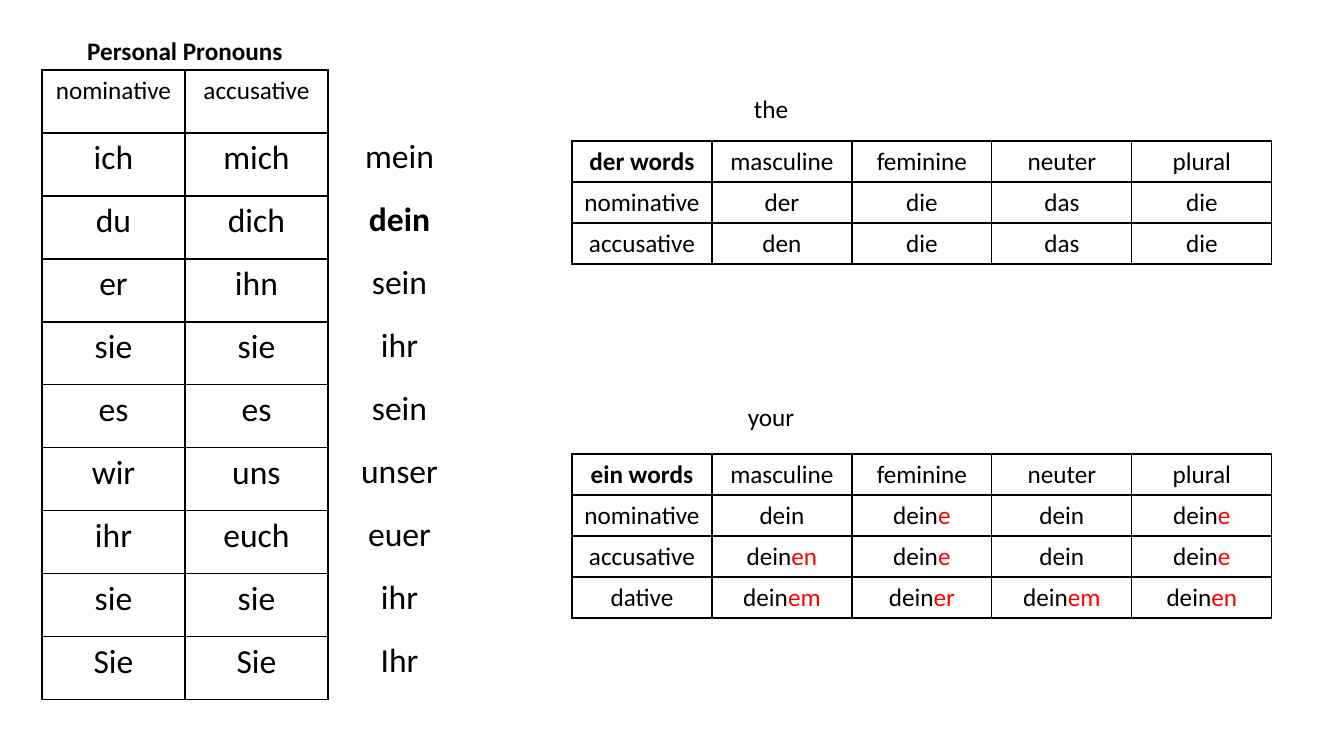
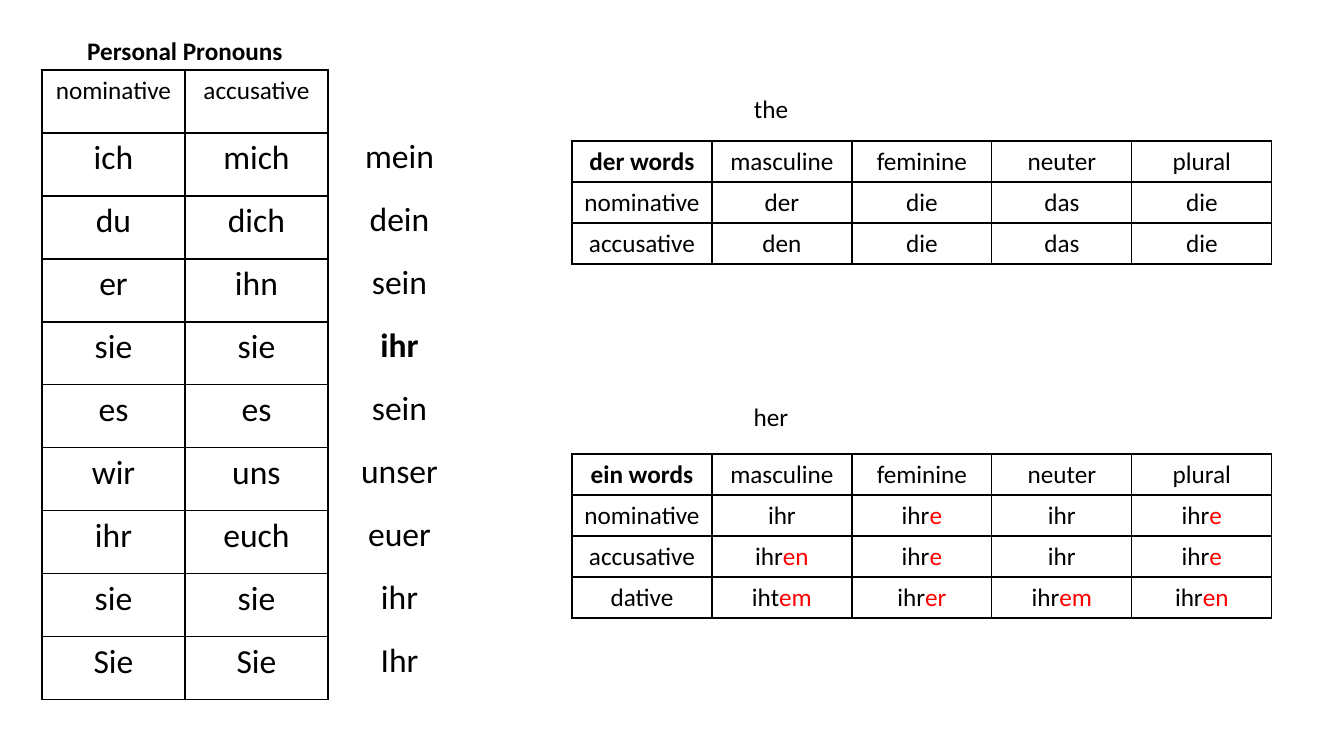
"""Build two slides of German pronoun and article tables."""
from lxml.etree import SubElement
from pptx import Presentation
from pptx.dml.color import RGBColor
from pptx.enum.text import MSO_ANCHOR, MSO_AUTO_SIZE, PP_ALIGN
from pptx.oxml import parse_xml
from pptx.oxml.ns import nsdecls, qn
from pptx.util import Pt

PX = 12700 * 72 / 100.8
FONT = "Calibri"
BLACK = "000000"
RED = "FF0000"
SMALL, LARGE = 18, 24

GENDERS = ["masculine", "feminine", "neuter", "plural"]
PRONOUNS = [
    ["nominative", "accusative"],
    ["ich", "mich"],
    ["du", "dich"],
    ["er", "ihn"],
    ["sie", "sie"],
    ["es", "es"],
    ["wir", "uns"],
    ["ihr", "euch"],
    ["sie", "sie"],
    ["Sie", "Sie"],
]
POSSESSIVES = ["mein", "dein", "sein", "ihr", "sein", "unser", "euer", "ihr", "Ihr"]
DER_WORDS = [
    ["der words", *GENDERS],
    ["nominative", "der", "die", "das", "die"],
    ["accusative", "den", "die", "das", "die"],
]
ENDINGS = {
    "nominative": ["", "e", "", "e"],
    "accusative": ["en", "e", "", "e"],
    "dative": ["em", "er", "em", "en"],
}
LESSONS = [
    {"meaning": "your", "stem": "dein", "dative_masculine": "dein|em"},
    {"meaning": "her", "stem": "ihr", "dative_masculine": "iht|em"},
]


def write(paragraph, text, size, bold=False):
    stem, _, ending = text.partition("|")
    paragraph.text = stem
    paragraph.alignment = PP_ALIGN.CENTER
    if ending:
        paragraph.add_run().text = ending
    for run, color in zip(paragraph.runs, (BLACK, RED)):
        run.font.name = FONT
        run.font.size = Pt(size)
        run.font.bold = bold
        run.font.color.rgb = RGBColor.from_string(color)


def add_grid(slide, left, top, column_width, row_height, rows, sizes, bold_cell=None, bordered=True):
    width, height = column_width * len(rows[0]), row_height * len(rows)
    box = [round(length * PX) for length in (left, top, width, height)]
    table = slide.shapes.add_table(len(rows), len(rows[0]), *box).table
    table.first_row = table.horz_banding = False
    for column in table.columns:
        column.width = round(column_width * PX)
    for row_index, words in enumerate(rows):
        table.rows[row_index].height = round(row_height * PX)
        size = sizes[min(row_index, len(sizes) - 1)]
        for column_index, word in enumerate(words):
            cell = table.cell(row_index, column_index)
            is_bold = (row_index, column_index) == bold_cell
            write(cell.text_frame.paragraphs[0], word, size, is_bold)
            properties = cell._tc.get_or_add_tcPr()
            for side in ("lnL", "lnR", "lnT", "lnB"):
                line = parse_xml(f'<a:{side} {nsdecls("a")} w="{Pt(1)}"/>')
                if bordered:
                    fill = SubElement(line, qn("a:solidFill"))
                    SubElement(fill, qn("a:srgbClr"), val=BLACK)
                else:
                    SubElement(line, qn("a:noFill"))
                properties.append(line)
            cell.fill.background()


presentation = Presentation()
presentation.slide_width = round(1344 * PX)
presentation.slide_height = round(756 * PX)

for lesson in LESSONS:
    slide = presentation.slides.add_slide(presentation.slide_layouts[5])
    stem = lesson["stem"]

    ein_words = [["ein words", *GENDERS]]
    for case, endings in ENDINGS.items():
        ein_words.append([case, *(f"{stem}|{ending}" for ending in endings)])
    ein_words[3][1] = lesson["dative_masculine"]

    add_grid(slide, 572, 454, 140, 41, ein_words, [SMALL], (0, 0))
    add_grid(slide, 572, 141, 140, 41, DER_WORDS, [SMALL], (0, 0))
    add_grid(slide, 42, 70, 143, 63, PRONOUNS, [SMALL, LARGE])
    add_grid(slide, 336, 132, 127, 63, [[word] for word in POSSESSIVES], [LARGE],
             (POSSESSIVES.index(stem), 0), bordered=False)

    title = slide.shapes.title
    captions = [
        (title, "Personal Pronouns", 46, 30),
        (slide.shapes.add_textbox(0, 0, 0, 0), "the", 632, 88),
        (slide.shapes.add_textbox(0, 0, 0, 0), lesson["meaning"], 632, 396),
    ]
    for shape, text, left, top in captions:
        shape.left, shape.top = round(left * PX), round(top * PX)
        shape.width, shape.height = round(278 * PX), round(40 * PX)
        text_frame = shape.text_frame
        text_frame.word_wrap = True
        text_frame.auto_size = MSO_AUTO_SIZE.NONE
        text_frame.vertical_anchor = MSO_ANCHOR.TOP
        write(text_frame.paragraphs[0], text, SMALL, shape is title)

presentation.save("out.pptx")
